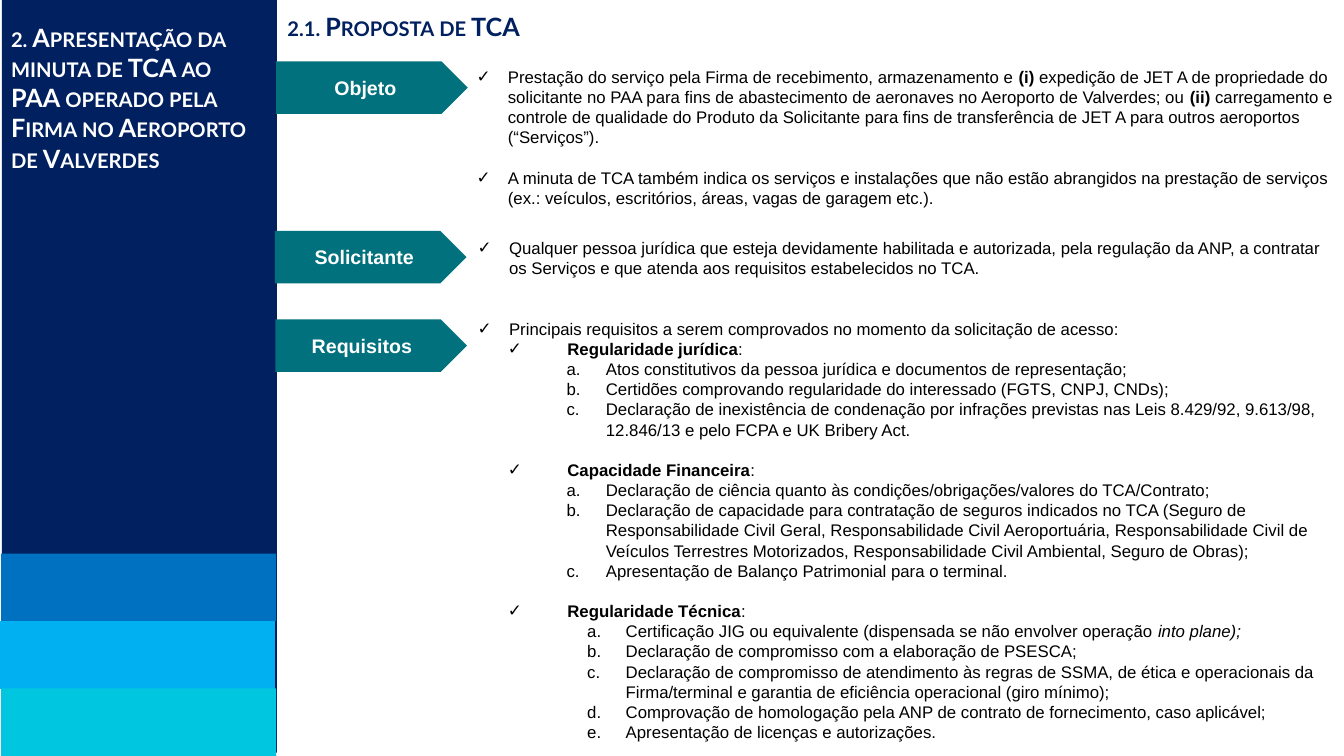
from lxml.etree import SubElement
from pptx import Presentation
from pptx.dml.color import RGBColor
from pptx.enum.shapes import MSO_SHAPE as Geometry
from pptx.enum.text import MSO_ANCHOR as Anchor, MSO_AUTO_SIZE as AutoSize, PP_ALIGN as Align
from pptx.oxml.ns import qn
from pptx.util import Cm, Pt

COLORS = {
    "navy": "002060", "blue": "0070C0", "sky": "00B0F0", "aqua": "00C7DF",
    "teal": "00717D", "white": "FFFFFF", "black": "000000",
}
LINE = 14.4  # body line height in points

# Indents in cm; "emphasis" is the font attribute of text between asterisks
LEVELS = {
    "check": {"left": 0.79, "hang": 0.79, "letter": False, "emphasis": "bold"},
    "group": {"left": 2.26, "hang": 1.5, "letter": False, "emphasis": "bold"},
    "letter": {"left": 3.23, "hang": 0.99, "letter": True, "emphasis": "italic"},
    "deep": {"left": 3.73, "hang": 0.97, "letter": True, "emphasis": "italic"},
}

# Each item: level, blank lines above, text
OBJETO = [
    ("check", 0, "Prestação do serviço pela Firma de recebimento, armazenamento e *(i) *expedição de JET A "
     "de propriedade do solicitante no PAA para fins de abastecimento de aeronaves no Aeroporto de "
     "Valverdes; ou *(ii) *carregamento e controle de qualidade do Produto da Solicitante para fins de "
     "transferência de JET A para outros aeroportos (“Serviços”)."),
    ("check", 1, "A minuta de TCA também indica os serviços e instalações que não estão abrangidos na "
     "prestação de serviços (ex.: veículos, escritórios, áreas, vagas de garagem etc.)."),
]
REQUISITOS = [
    ("check", 0, "Qualquer pessoa jurídica que esteja devidamente habilitada e autorizada, pela regulação "
     "da ANP, a contratar os Serviços e que atenda aos requisitos estabelecidos no TCA."),
    ("check", 2, "Principais requisitos a serem comprovados no momento da solicitação de acesso:"),
    ("group", 0, "*Regularidade jurídica*:"),
    ("letter", 0, "Atos constitutivos da pessoa jurídica e documentos de representação;"),
    ("letter", 0, "Certidões comprovando regularidade do interessado (FGTS, CNPJ, CNDs);"),
    ("letter", 0, "Declaração de inexistência de condenação por infrações previstas nas Leis 8.429/92, "
     "9.613/98, 12.846/13 e pelo FCPA e UK Bribery Act."),
    ("group", 1, "*Capacidade Financeira*:"),
    ("letter", 0, "Declaração de ciência quanto às condições/obrigações/valores do TCA/Contrato;"),
    ("letter", 0, "Declaração de capacidade para contratação de seguros indicados no TCA (Seguro de "
     "Responsabilidade Civil Geral, Responsabilidade Civil Aeroportuária, Responsabilidade Civil de "
     "Veículos Terrestres Motorizados, Responsabilidade Civil Ambiental, Seguro de Obras);"),
    ("letter", 0, "Apresentação de Balanço Patrimonial para o terminal."),
    ("group", 1, "*Regularidade Técnica*:"),
    ("deep", 0, "Certificação JIG ou equivalente (dispensada se não envolver operação *into plane);*"),
    ("deep", 0, "Declaração de compromisso com a elaboração de PSESCA;"),
    ("deep", 0, "Declaração de compromisso de atendimento às regras de SSMA, de ética e operacionais da "
     "Firma/terminal e garantia de eficiência operacional (giro mínimo);"),
    ("deep", 0, "Comprovação de homologação pela ANP de contrato de fornecimento, caso aplicável;"),
    ("deep", 0, "Apresentação de licenças e autorizações."),
]


class SlideBuilder:
    heading = {"name": "Lato", "size": Pt(18), "bold": True}
    label_font = {"name": "Arial", "size": Pt(14), "bold": True}
    body = {"name": "Arial", "size": Pt(12)}

    def __init__(self, slide):
        self.slide = slide

    def add_run(self, paragraph, text, font, color):
        run = paragraph.add_run()
        run.text = text
        for attribute, value in font.items():
            setattr(run.font, attribute, value)
        run.font.color.rgb = RGBColor.from_string(COLORS[color])
        return run

    def set_frame(self, frame, anchor=Anchor.TOP):
        settings = {"word_wrap": True, "auto_size": AutoSize.NONE, "vertical_anchor": anchor}
        for attribute, value in settings.items():
            setattr(frame, attribute, value)

    def block(self, geometry, box, color, outlined=False):
        block = self.slide.shapes.add_shape(geometry, *map(Cm, box))
        block.shadow.inherit = False
        block.fill.solid()
        block.fill.fore_color.rgb = RGBColor.from_string(COLORS[color])
        if outlined:
            block.line.color.rgb = RGBColor.from_string(COLORS[color])
            block.line.width = Pt(0.75)
        else:
            block.line.fill.background()
        return block

    def label(self, box, text):
        frame = self.block(Geometry.PENTAGON, box, "teal").text_frame
        self.set_frame(frame, Anchor.MIDDLE)
        frame.paragraphs[0].alignment = Align.CENTER
        self.add_run(frame.paragraphs[0], text, self.label_font, "white")

    def small_caps(self, frame, text, color):
        self.set_frame(frame)
        frame.paragraphs[0].alignment = Align.LEFT
        run = self.add_run(frame.paragraphs[0], text, self.heading, color)
        run.font._element.set("cap", "small")

    def title(self, box, text):
        title = self.slide.shapes.title
        for side, length in zip(("left", "top", "width", "height"), box):
            setattr(title, side, Cm(length))
        self.small_caps(title.text_frame, text, "navy")

    def side_heading(self, box, text):
        self.small_caps(self.slide.shapes.add_textbox(*map(Cm, box)).text_frame, text, "white")

    def bullet(self, paragraph, level):
        properties = paragraph._p.get_or_add_pPr()
        properties.set("marL", str(Cm(level["left"])))
        properties.set("indent", str(-Cm(level["hang"])))
        bullet_color = SubElement(properties, qn("a:buClr"))
        SubElement(bullet_color, qn("a:srgbClr"), val=COLORS["black"])
        SubElement(properties, qn("a:buFont"), typeface="Arial")
        if level["letter"]:
            SubElement(properties, qn("a:buAutoNum"), type="alphaLcPeriod")
        else:
            SubElement(properties, qn("a:buChar"), char="✓")

    def bullet_list(self, box, items):
        frame = self.slide.shapes.add_textbox(*map(Cm, box)).text_frame
        self.set_frame(frame)
        for index, (level_name, gap, text) in enumerate(items):
            level = LEVELS[level_name]
            paragraph = frame.add_paragraph() if index else frame.paragraphs[0]
            spacing = {"level": int(level["letter"]), "line_spacing": Pt(LINE),
                       "space_before": Pt(gap * LINE)}
            for attribute, value in spacing.items():
                setattr(paragraph, attribute, value)
            self.bullet(paragraph, level)
            for part, words in enumerate(text.split("*")):
                if words:
                    emphasis = {level["emphasis"]: True} if part % 2 else {}
                    self.add_run(paragraph, words, {**self.body, **emphasis}, "black")


def main():
    deck = Presentation()
    deck.slide_width, deck.slide_height = Cm(33.87), Cm(19.05)
    builder = SlideBuilder(deck.slides.add_slide(deck.slide_layouts[5]))

    # Sidebar with its three colour bands
    builder.block(Geometry.RECTANGLE, (0.05, -0.08, 6.93, 19.05), "navy")
    for row, (color, left) in enumerate([("blue", 0.03), ("sky", 0), ("aqua", 0.03)]):
        builder.block(Geometry.RECTANGLE, (left, 13.95 + 1.7 * row, 6.93, 1.7), color, color == "sky")
    builder.side_heading((0.03, 0.43, 6.91, 6.27), "2. Apresentação da minuta de TCA ao PAA operado "
                         "pela Firma no Aeroporto de Valverdes")

    # Title
    builder.title((6.99, 0.15, 17.02, 1.02), "2.1. Proposta de TCA")

    # Arrow labels
    for text, left, top in [("Objeto", 6.96, 1.55), ("Solicitante", 6.93, 5.82), ("Requisitos ", 6.94, 8.05)]:
        builder.label((left, top, 4.83, 1.32), text)

    # Descriptions beside the labels
    builder.bullet_list((11.76, 1.55, 22.1, 3.84), OBJETO)
    builder.bullet_list((11.79, 5.87, 22.07, 13.08), REQUISITOS)

    deck.save("out.pptx")


if __name__ == "__main__":
    main()
